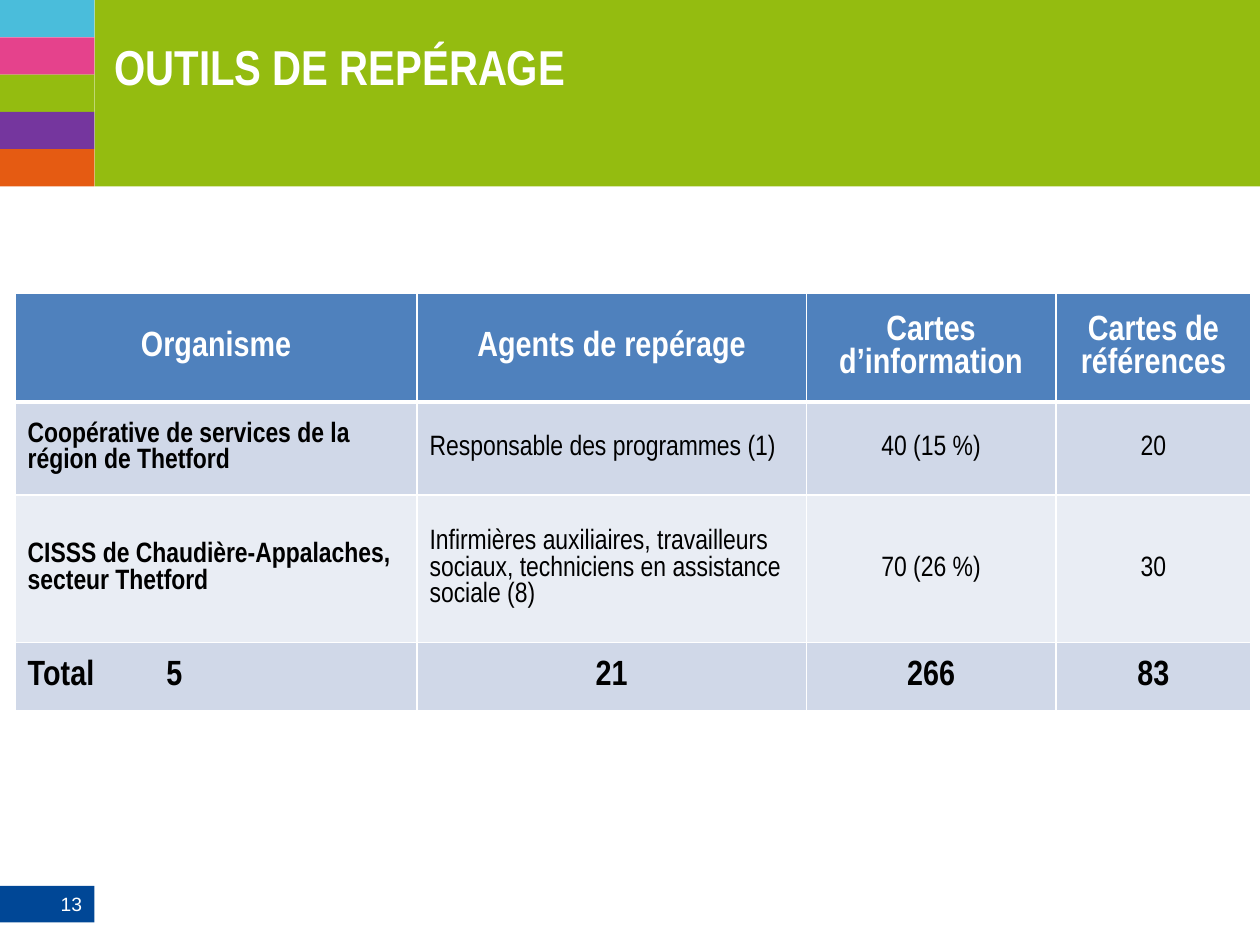
import pptx
import pptx.dml.color
import pptx.enum.shapes
import pptx.enum.text
import pptx.oxml
import pptx.oxml.ns
import pptx.util

RGBColor = pptx.dml.color.RGBColor
PP_ALIGN = pptx.enum.text.PP_ALIGN
MIDDLE = pptx.enum.text.MSO_ANCHOR.MIDDLE

WHITE = RGBColor(0xFF, 0xFF, 0xFF)
BLACK = RGBColor(0x00, 0x00, 0x00)
GREEN = RGBColor(0x94, 0xBC, 0x10)
CYAN = RGBColor(0x4A, 0xBD, 0xDB)
PINK = RGBColor(0xE5, 0x42, 0x8C)
PURPLE = RGBColor(0x75, 0x36, 0x9E)
ORANGE = RGBColor(0xE5, 0x5B, 0x12)
NAVY = RGBColor(0x00, 0x47, 0x96)
HEADER_BLUE = RGBColor(0x4F, 0x81, 0xBD)
BAND_DARK = RGBColor(0xD0, 0xD8, 0xE8)
BAND_LIGHT = RGBColor(0xE9, 0xED, 0xF4)

# The slide is a grid of 100 columns by 75 rows.
COLUMNS, ROWS = 100, 75
SIDEBAR = 7.5
BANNER = 14.8


def write(tf, text, font="Arial Narrow", size=16, color=BLACK, bold=False,
          align=PP_ALIGN.LEFT, tab=None):
    """Fill a text frame with one paragraph; tab is a tab stop length."""
    p = tf.paragraphs[0]
    p.alignment = align
    if tab is not None:
        p._p.get_or_add_pPr().append(pptx.oxml.parse_xml(
            f'<a:tabLst {pptx.oxml.ns.nsdecls("a")}>'
            f'<a:tab pos="{tab}" algn="l"/></a:tabLst>'))
    r = p.add_run()
    r.text = text
    r.font.name = font
    r.font.size = pptx.util.Pt(size)
    r.font.bold = bold
    r.font.color.rgb = color


def set_borders(cell, **widths):
    """Draw white borders; widths are points for L, R, T and B."""
    tcPr = cell._tc.get_or_add_tcPr()
    for side, width in widths.items():
        tcPr.append(pptx.oxml.parse_xml(
            f'<a:ln{side} {pptx.oxml.ns.nsdecls("a")} w="{pptx.util.Pt(width)}">'
            f'<a:solidFill><a:srgbClr val="{WHITE}"/></a:solidFill></a:ln{side}>'))


class Deck:
    """Holds the presentation, its grid and the current slide."""

    def __init__(self):
        self.prs = pptx.Presentation()
        self.prs.slide_width = pptx.util.Inches(10)
        self.prs.slide_height = pptx.util.Inches(7.5)
        self.s = self.prs.slides.add_slide(self.prs.slide_layouts[6])

    def x(self, columns):
        return round(self.prs.slide_width * columns / COLUMNS)

    def y(self, rows):
        return round(self.prs.slide_height * rows / ROWS)

    def box(self, left, top, width, height):
        return self.x(left), self.y(top), self.x(width), self.y(height)

    def block(self, *place, fill):
        sp = self.s.shapes.add_shape(
            pptx.enum.shapes.MSO_SHAPE.RECTANGLE, *self.box(*place))
        sp.shadow.inherit = False
        sp.fill.solid()
        sp.fill.fore_color.rgb = fill
        sp.line.fill.background()
        return sp

    def text(self, *place, text, **style):
        tf = self.s.shapes.add_textbox(*self.box(*place)).text_frame
        tf.word_wrap = True
        tf.margin_left = tf.margin_right = tf.margin_top = tf.margin_bottom = 0
        write(tf, text, **style)

    def table(self, left, top, widths, heights, rows):
        place = self.box(left, top, sum(widths), sum(heights))
        table = self.s.shapes.add_table(len(rows), len(widths), *place).table
        for column, width in zip(table.columns, widths):
            column.width = self.x(width)
        for row, height in zip(table.rows, heights):
            row.height = self.y(height)
        for i, row in enumerate(rows):
            for j, text in enumerate(row):
                self.cell(table.cell(i, j), text, i, j, len(rows) - 1)

    def cell(self, cell, text, i, j, last):
        header, total = i == 0, i == last
        set_borders(cell, L=1, R=1, T=3 if i == 1 else 1, B=3 if header else 1)
        cell.fill.solid()
        cell.fill.fore_color.rgb = (
            HEADER_BLUE if header else BAND_DARK if i % 2 else BAND_LIGHT)
        cell.vertical_anchor = MIDDLE
        centred = header or j > 1 or (total and j > 0)
        write(cell.text_frame, text,
              size=20 if header or total else 16,
              color=WHITE if header else BLACK,
              bold=header or total or j == 0,
              align=PP_ALIGN.CENTER if centred else PP_ALIGN.LEFT,
              tab=self.x(11) if "\t" in text else None)


def main():
    deck = Deck()
    deck.block(SIDEBAR, 0, COLUMNS - SIDEBAR, BANNER, fill=GREEN)

    page = deck.block(0, 70.3, SIDEBAR, 2.9, fill=NAVY)
    page.text_frame.vertical_anchor = MIDDLE
    write(page.text_frame, "13", font="Arial", size=11, color=WHITE,
          align=PP_ALIGN.RIGHT)

    stripes = (CYAN, PINK, GREEN, PURPLE, ORANGE)
    stripe = BANNER / len(stripes)
    for i, color in enumerate(stripes):
        deck.block(0, i * stripe, SIDEBAR, stripe, fill=color)

    deck.text(9.1, 2.9, 57, 8.5, text="OUTILS DE REPÉRAGE",
              size=28, color=WHITE, bold=True)

    deck.table(1.2, 23.3, (31.9, 30.9, 19.8, 15.5), (8.6, 7.4, 11.7, 5.4), (
        ("Organisme", "Agents de repérage", "Cartes d’information",
         "Cartes de références"),
        ("Coopérative de services de la région de Thetford",
         "Responsable des programmes (1)", "40 (15 %)", "20"),
        ("CISSS de Chaudière-Appalaches, secteur Thetford",
         "Infirmières auxiliaires, travailleurs sociaux, "
         "techniciens en assistance sociale (8)", "70 (26 %)", "30"),
        ("Total\t5", "21", "266", "83"),
    ))
    deck.prs.save("out.pptx")


if __name__ == "__main__":
    main()
